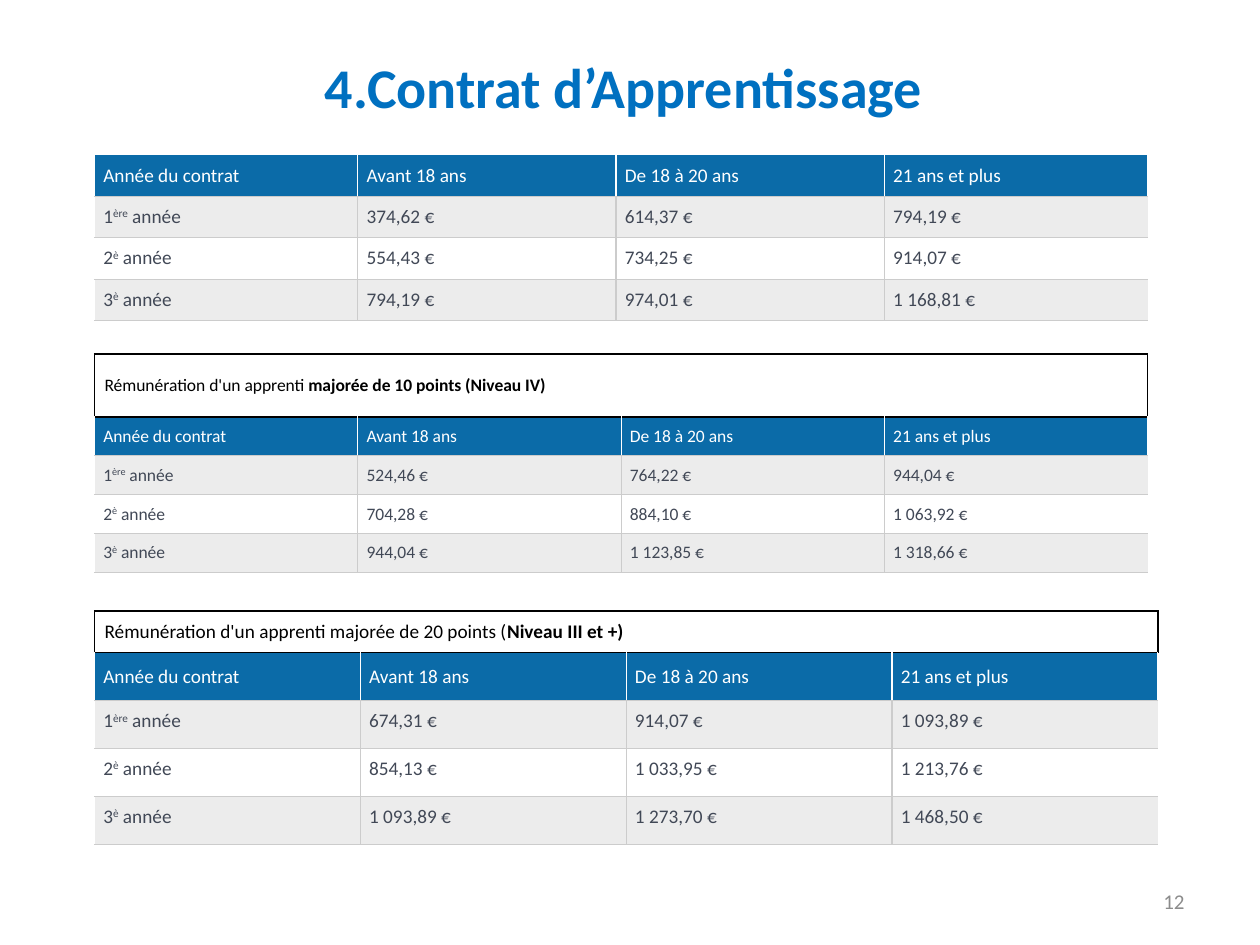
from lxml import etree
from pptx import Presentation
from pptx.dml.color import RGBColor
from pptx.enum.text import MSO_ANCHOR, PP_ALIGN
from pptx.oxml.ns import qn
from pptx.util import Inches, Pt

MIDDLE, TOP = MSO_ANCHOR.MIDDLE, MSO_ANCHOR.TOP
CENTER, RIGHT = PP_ALIGN.CENTER, PP_ALIGN.RIGHT
FONT = "Calibri"
BLUE, WHITE, BLACK = "0B6BA8", "FFFFFF", "000000"
GREY_LINE, GREY_BAND, GREY_TEXT = "CCCCCC", "ECECEC", "414856"
PLAIN_TABLE_STYLE = "{2D5ABB26-0587-4C30-8999-92F81FD0307C}"
HEADERS = ["Année du contrat", "Avant 18 ans", "De 18 à 20 ans", "21 ans et plus"]
YEARS = [("1", "ère"), ("2", "è"), ("3", "è")]
TABLES = [
    {
        "top": 1.23, "columns": [2.09, 2.05, 2.13, 2.09], "size": 11,
        "caption": None, "caption_height": 0, "row_height": 0.32,
        "amounts": [
            ["374,62 €", "614,37 €", "794,19 €"],
            ["554,43 €", "734,25 €", "914,07 €"],
            ["794,19 €", "974,01 €", "1 168,81 €"],
        ],
    },
    {
        "top": 2.81, "columns": [2.09] * 4, "size": 10,
        "caption": ("Rémunération d'un apprenti ", "majorée de 10 points (Niveau IV)"),
        "caption_height": 0.5, "row_height": 0.3,
        "amounts": [
            ["524,46 €", "764,22 €", "944,04 €"],
            ["704,28 €", "884,10 €", "1 063,92 €"],
            ["944,04 €", "1 123,85 €", "1 318,66 €"],
        ],
    },
    {
        "top": 4.85, "columns": [2.11] * 4, "size": 11,
        "caption": ("Rémunération d'un apprenti majorée de 20 points (", "Niveau III et +)"),
        "caption_height": 0.33, "row_height": 0.38,
        "amounts": [
            ["674,31 €", "914,07 €", "1 093,89 €"],
            ["854,13 €", "1 033,95 €", "1 213,76 €"],
            ["1 093,89 €", "1 273,70 €", "1 468,50 €"],
        ],
    },
]


def color(value):
    return RGBColor.from_string(value)


def add_run(paragraph, text, size, text_color, bold=False, raised=False):
    run = paragraph.add_run()
    run.text = text
    run.font.name = FONT
    run.font.size = Pt(size)
    run.font.bold = bold
    run.font.color.rgb = color(text_color)
    if raised:
        run.font._element.set("baseline", "30000")


def set_borders(cell, borders, width=0.75):
    properties = cell._tc.get_or_add_tcPr()
    for side in "LRTB":
        if side in borders:
            line = etree.SubElement(properties, qn(f"a:ln{side}"), w=str(Pt(width)))
            fill = etree.SubElement(line, qn("a:solidFill"))
            etree.SubElement(fill, qn("a:srgbClr"), val=borders[side])


def style_cell(cell, fill, anchor, horizontal=0.07, vertical=0.07):
    cell.fill.solid()
    cell.fill.fore_color.rgb = color(fill)
    cell.vertical_anchor = anchor
    cell.margin_left = cell.margin_right = Inches(horizontal)
    cell.margin_top = cell.margin_bottom = Inches(vertical)


def fill_caption(table, caption, size):
    cells = list(table.rows[0].cells)
    cells[0].merge(cells[-1])
    set_borders(cells[0], dict.fromkeys("LRTB", BLACK), 1)
    for cell in cells[1:-1]:
        set_borders(cell, {"T": BLACK}, 1)
    set_borders(cells[-1], {"R": BLACK, "T": BLACK}, 1)
    style_cell(cells[0], WHITE, MIDDLE, 0.08, 0.04)
    paragraph = cells[0].text_frame.paragraphs[0]
    for text, bold in zip(caption, (False, True)):
        add_run(paragraph, text, size, BLACK, bold)


def fill_header(table, row, size):
    for column, text in enumerate(HEADERS):
        cell = table.cell(row, column)
        set_borders(cell, {"L": WHITE, "R": WHITE, "B": GREY_LINE})
        style_cell(cell, BLUE, MIDDLE)
        add_run(cell.text_frame.paragraphs[0], text, size, WHITE)


def fill_year(table, row, year, amounts, fill, size):
    last = len(amounts)
    for column in range(last + 1):
        cell = table.cell(row, column)
        borders = dict.fromkeys("LRTB", GREY_LINE)
        if column == 0:
            borders["L"] = WHITE
        if column == last:
            del borders["R"]
        set_borders(cell, borders)
        style_cell(cell, fill, TOP)
        paragraph = cell.text_frame.paragraphs[0]
        if column:
            add_run(paragraph, amounts[column - 1], size, GREY_TEXT)
        else:
            number, ordinal = year
            add_run(paragraph, number, size, GREY_TEXT)
            add_run(paragraph, ordinal, size, GREY_TEXT, raised=True)
            add_run(paragraph, " année", size, GREY_TEXT)


def add_pay_table(slide, top, columns, size, caption, caption_height, row_height, amounts):
    heights = [row_height] * (len(amounts) + 1)
    if caption:
        heights.insert(0, caption_height)
    frame = slide.shapes.add_table(
        len(heights), len(columns), Inches(0.75), Inches(top),
        Inches(sum(columns)), Inches(sum(heights)))
    table = frame.table
    table._tbl.tblPr.find(qn("a:tableStyleId")).text = PLAIN_TABLE_STYLE
    for column, width in zip(table.columns, columns):
        column.width = Inches(width)
    for row, height in zip(table.rows, heights):
        row.height = Inches(height)
    header_row = 0
    if caption:
        fill_caption(table, caption, size)
        header_row = 1
    fill_header(table, header_row, size)
    for index, (year, values) in enumerate(zip(YEARS, amounts)):
        fill = WHITE if index % 2 else GREY_BAND
        fill_year(table, header_row + 1 + index, year, values, fill, size)


def write_line(shape, text, size, text_color, alignment, bold=False):
    shape.text_frame.word_wrap = True
    shape.text_frame.vertical_anchor = MIDDLE
    paragraph = shape.text_frame.paragraphs[0]
    paragraph.alignment = alignment
    add_run(paragraph, text, size, text_color, bold)


def add_title(slide):
    title = slide.shapes.title
    title.left, title.top = Inches(0.5), Inches(0.3)
    title.width, title.height = Inches(9), Inches(0.77)
    write_line(title, "4.Contrat d’Apprentissage ", 32, "0070C0", CENTER, True)


def add_page_number(slide):
    box = slide.shapes.add_textbox(Inches(7.17), Inches(6.95), Inches(2.33), Inches(0.4))
    write_line(box, "12", 12, "8C8C8C", RIGHT)


def main():
    presentation = Presentation()
    presentation.slide_width, presentation.slide_height = Inches(10), Inches(7.5)
    slide = presentation.slides.add_slide(presentation.slide_layouts[5])
    add_title(slide)
    for pay_table in TABLES:
        add_pay_table(slide, **pay_table)
    add_page_number(slide)
    presentation.save("out.pptx")


if __name__ == "__main__":
    main()
